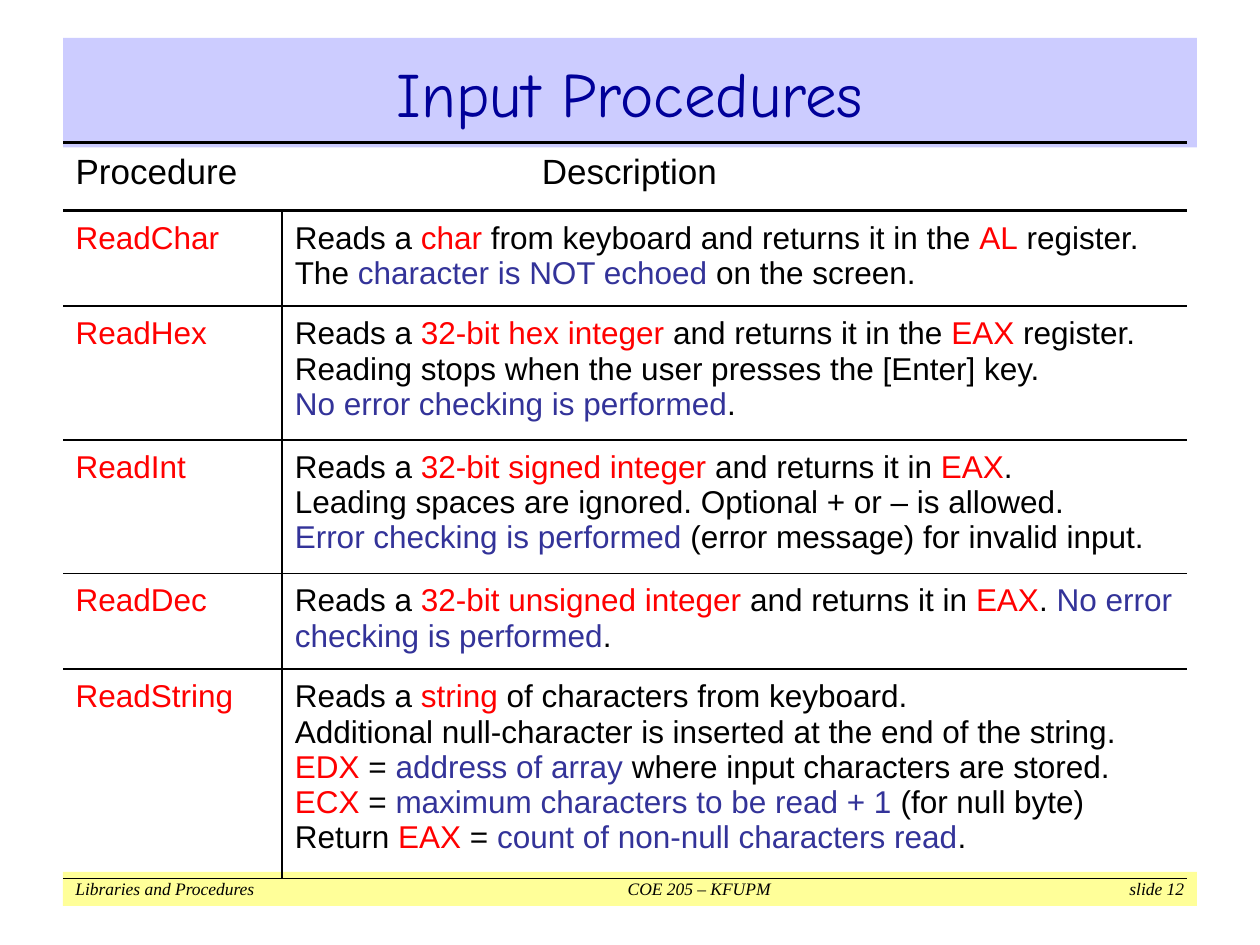
"""Build the Input Procedures slide."""
from dataclasses import dataclass
from typing import Any, NamedTuple

from lxml.etree import SubElement
from pptx import Presentation
from pptx.dml.color import RGBColor as Rgb
from pptx.enum.text import MSO_ANCHOR as Anchor, MSO_AUTO_SIZE as AutoSize, PP_ALIGN as Align
from pptx.oxml.ns import qn
from pptx.util import Inches, Pt


@dataclass(frozen=True)
class Theme:
    """Colours, fonts and sizes of the slide."""
    ink: str = "000000"
    red: str = "FF0000"
    blue: str = "333399"
    title: str = "000099"
    title_fill: str = "CCCCFF"
    footer_fill: str = "FFFF99"
    body_font: str = "Arial"
    title_font: str = "Comic Neue"
    footer_font: str = "Times New Roman"
    title_size: int = 36
    header_size: int = 20
    body_size: int = 18
    footer_size: int = 10
    thick: float = 1.5
    thin: float = 1


THEME = Theme()


class Run(NamedTuple):
    """A piece of text in one colour."""
    text: str
    color: str = THEME.ink


class Procedure(NamedTuple):
    """A table row: name, height and lines of runs."""
    name: str
    height: float
    lines: list[list[Run]]


def red(text: str) -> Run:
    """Return a run for a key term."""
    return Run(text, THEME.red)


def blue(text: str) -> Run:
    """Return a run for a remark."""
    return Run(text, THEME.blue)


READS = Run("Reads a ")
RETURNS = Run("and returns it in ")
RETURNS_THE = Run("and returns it in the ")
REGISTER = Run(" register.")
EQUALS = Run(" = ")
STOP = Run(".")
EAX = red("EAX")
UNCHECKED = blue("No error checking is performed")

PROCEDURES = [
    Procedure("ReadChar", 0.75, [
        [READS, red("char"), Run(" from keyboard and returns it in the "), red("AL"), REGISTER],
        [Run("The "), blue("character is NOT echoed"), Run(" on the screen.")],
    ]),
    Procedure("ReadHex", 1.05, [
        [READS, red("32-bit hex integer "), RETURNS_THE, EAX, REGISTER],
        [Run("Reading stops when the user presses the [Enter] key.")],
        [UNCHECKED, STOP],
    ]),
    Procedure("ReadInt", 1.05, [
        [READS, red("32-bit signed integer "), RETURNS, EAX, STOP],
        [Run("Leading spaces are ignored. Optional + or – is allowed.")],
        [blue("Error checking is performed "), Run("(error message) for invalid input.")],
    ]),
    Procedure("ReadDec", 0.75, [
        [READS, red("32-bit unsigned integer "), RETURNS, EAX, Run(". "), UNCHECKED, STOP],
    ]),
    Procedure("ReadString", 1.64, [
        [READS, red("string"), Run(" of characters from keyboard.")],
        [Run("Additional null-character is inserted at the end of the string.")],
        [red("EDX"), EQUALS, blue("address of array "), Run("where input characters are stored.")],
        [red("ECX"), EQUALS, blue("maximum characters to be read + 1 "), Run("(for null byte)")],
        [Run("Return "), EAX, EQUALS, blue("count of non-null characters read"), STOP],
    ]),
]
COLUMN_WIDTHS = (1.74, 7.18)
HEADER_HEIGHT = 0.54


def apply(target: Any, values: dict[str, Any]) -> None:
    """Set each attribute named in values."""
    for name, value in values.items():
        setattr(target, name, value)


def fill_solid(target: Any, color: str) -> None:
    """Give a shape a plain fill."""
    target.fill.solid()
    target.fill.fore_color.rgb = Rgb.from_string(color)


def write_lines(frame: Any, lines: list[list[Run]], font: str, size: float, **extra: Any) -> None:
    """Write one paragraph for each line of runs."""
    for index, line in enumerate(lines):
        paragraph = frame.add_paragraph() if index else frame.paragraphs[0]
        for piece in line:
            run = paragraph.add_run()
            run.text = piece.text
            apply(run.font, {"name": font, "size": Pt(size), **extra})
            run.font.color.rgb = Rgb.from_string(piece.color)


def set_borders(cell: Any, widths: dict[str, float]) -> None:
    """Draw the given cell sides and hide the others."""
    properties = cell._tc.get_or_add_tcPr()
    for position, side in enumerate(("lnL", "lnR", "lnT", "lnB")):
        width = widths.get(side, 0)
        line = SubElement(properties, qn(f"a:{side}"), w=str(Pt(width)))
        properties.insert(position, line)
        if width:
            solid = SubElement(line, qn("a:solidFill"))
            SubElement(solid, qn("a:srgbClr"), val=THEME.ink)
        else:
            SubElement(line, qn("a:noFill"))


def write_cell(cell: Any, lines: list[list[Run]], size: float, borders: dict[str, float]) -> None:
    """Fill one table cell."""
    apply(cell, {"margin_left": Inches(0.1), "margin_right": Inches(0.1),
                 "margin_top": Inches(0.08), "margin_bottom": Inches(0.08),
                 "vertical_anchor": Anchor.TOP})
    cell.fill.background()
    write_lines(cell.text_frame, lines, THEME.body_font, size)
    set_borders(cell, borders)


def add_title(slide: Any, text: str) -> None:
    """Format the title placeholder as a banner."""
    title = slide.shapes.title
    apply(title, {"left": Inches(0.5), "top": Inches(0.3),
                  "width": Inches(9), "height": Inches(0.87)})
    fill_solid(title, THEME.title_fill)
    frame = title.text_frame
    apply(frame, {"vertical_anchor": Anchor.MIDDLE, "auto_size": AutoSize.NONE})
    write_lines(frame, [[Run(text, THEME.title)]], THEME.title_font, THEME.title_size)
    frame.paragraphs[0].alignment = Align.CENTER


def add_footer(slide: Any, parts: list[str]) -> None:
    """Add the footer band with its parts on tab stops."""
    footer = slide.shapes.add_textbox(Inches(0.5), Inches(6.92), Inches(9), Inches(0.27))
    fill_solid(footer, THEME.footer_fill)
    apply(footer.text_frame, {"word_wrap": True, "vertical_anchor": Anchor.MIDDLE})
    write_lines(footer.text_frame, [[Run("\t".join(parts))]],
                THEME.footer_font, THEME.footer_size, italic=True)
    stops = SubElement(footer.text_frame.paragraphs[0]._p.get_or_add_pPr(), qn("a:tabLst"))
    for place, alignment in ((4.95, "ctr"), (8.8, "r")):
        SubElement(stops, qn("a:tab"), pos=str(Inches(place)), algn=alignment)


def add_procedure_table(slide: Any) -> None:
    """Add the table of procedures."""
    heights = [HEADER_HEIGHT, *(procedure.height for procedure in PROCEDURES)]
    table = slide.shapes.add_table(
        len(heights), len(COLUMN_WIDTHS), Inches(0.5), Inches(1.13),
        Inches(sum(COLUMN_WIDTHS)), Inches(sum(heights))).table
    apply(table, {"first_row": False, "horz_banding": False})
    for column, width in zip(table.columns, COLUMN_WIDTHS):
        column.width = Inches(width)
    for row, height in zip(table.rows, heights):
        row.height = Inches(height)
    for column, heading in enumerate(("Procedure", "Description")):
        write_cell(table.cell(0, column), [[Run(heading)]], THEME.header_size,
                   {"lnT": THEME.thick, "lnB": THEME.thick})
    description = table.cell(0, 1).text_frame.paragraphs[0]._p.get_or_add_pPr()
    description.set("marL", str(Inches(1.96)))
    for row, procedure in enumerate(PROCEDURES, start=1):
        rules = {"lnT": THEME.thick if row == 1 else THEME.thin, "lnB": THEME.thin}
        write_cell(table.cell(row, 0), [[red(procedure.name)]], THEME.body_size,
                   {**rules, "lnR": THEME.thin})
        write_cell(table.cell(row, 1), procedure.lines, THEME.body_size,
                   {**rules, "lnL": THEME.thin})


def main() -> None:
    """Build and save the presentation."""
    presentation = Presentation()
    apply(presentation, {"slide_width": Inches(10), "slide_height": Inches(7.5)})
    slide = presentation.slides.add_slide(presentation.slide_layouts[5])
    add_title(slide, "Input Procedures")
    add_footer(slide, ["Libraries and Procedures", "COE 205 – KFUPM", "slide 12"])
    add_procedure_table(slide)
    presentation.save("out.pptx")


if __name__ == "__main__":
    main()
